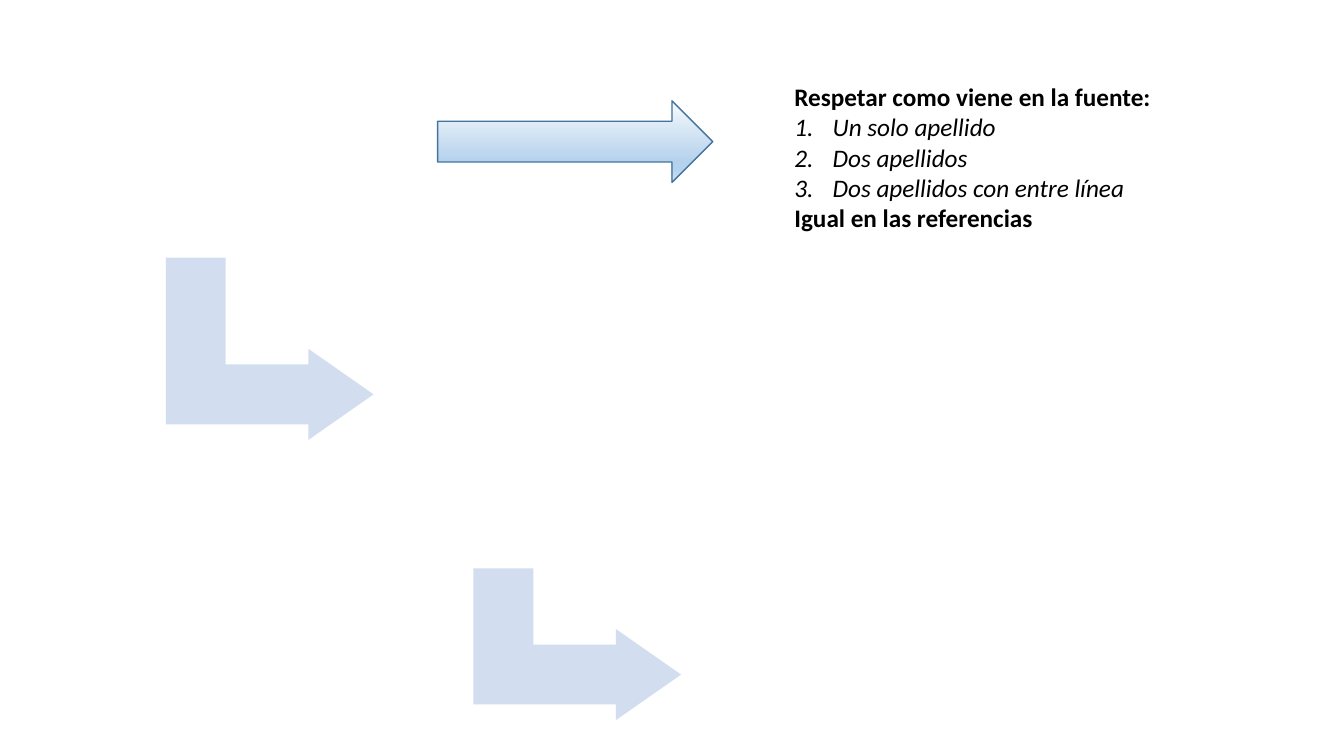
import copy
import pptx
import pptx.util
import pptx.dml.color
import pptx.enum.shapes
import pptx.oxml.ns
import pptx.oxml.xmlchemy
from lxml import etree

Inches = pptx.util.Inches
Kind = pptx.enum.shapes.MSO_SHAPE
qn = pptx.oxml.ns.qn

theme = {
    "font": "Calibri",
    "size": 18,
    "text": "000000",
    "card": "FFFFFF",
    "bend": "D2DEEF",
    "edge": "43739E",
    "fade": [(0, "F7FAFD"), (74, "B5D2EC"), (83, "B5D2EC"), (100, "CEE1F2")],
}

lines = [
    ("Respetar como viene en la fuente:", False),
    ("Un solo apellido", True),
    ("Dos apellidos", True),
    ("Dos apellidos con entre línea", True),
    ("Igual en las referencias", False),
]

bend = (0.328, 0.25, 0.358)
steps = [
    (Kind.BENT_UP_ARROW, (1.77, 2.43, 1.81, 2.06), "bend"),
    (Kind.ROUNDED_RECTANGLE, (1.29, 0.42, 3.05, 2.13), "card"),
    (Kind.BENT_UP_ARROW, (4.82, 5.21, 1.81, 2.06), "bend"),
    (Kind.ROUNDED_RECTANGLE, (3.93, 2.74, 4.09, 2.9), "card"),
    (Kind.ROUNDED_RECTANGLE, (6.98, 5.77, 2.66, 1.59), "card"),
]
arrow = (4.34, 1, 2.73, 0.81)
note = (7.78, 0.76, 3.95, 1.62)
indent = 0.38


def color(code):
    return pptx.dml.color.RGBColor.from_string(code)


def place(slide, kind, box):
    shape = slide.shapes.add_shape(kind, *map(Inches, box))
    shape.shadow.inherit = False
    return shape


def draw_step(slide, kind, box, role):
    shape = place(slide, kind, box)
    shape.fill.solid()
    shape.fill.fore_color.rgb = color(theme[role])
    shape.line.fill.background()
    if role == "bend":
        shape.rotation = 90
        for i, value in enumerate(bend):
            shape.adjustments[i] = value


def draw_arrow(slide):
    shape = place(slide, Kind.RIGHT_ARROW, arrow)
    shape.fill.gradient()
    shape.fill.gradient_angle = 270
    stops = shape._element.spPr.find(qn("a:gradFill")).find(qn("a:gsLst"))
    for stop in list(stops)[1:]:
        stops.remove(stop)
    for _ in theme["fade"][1:]:
        stops.append(copy.deepcopy(stops[0]))
    for stop, (spot, code) in zip(shape.fill.gradient_stops, theme["fade"]):
        stop.position = spot / 100
        stop.color.rgb = color(code)
    shape.line.color.rgb = color(theme["edge"])
    shape.line.width = pptx.util.Pt(1)


def draw_note(slide):
    frame = slide.shapes.add_textbox(*map(Inches, note)).text_frame
    frame.word_wrap = True
    for i, (text, item) in enumerate(lines):
        para = frame.paragraphs[0] if i == 0 else frame.add_paragraph()
        run = para.add_run()
        run.text = text
        font = run.font
        font.name = theme["font"]
        font.size = pptx.util.Pt(theme["size"])
        font.color.rgb = color(theme["text"])
        font.bold = not item
        font.italic = item
        if item:
            props = para._p.get_or_add_pPr()
            props.set("marL", str(Inches(indent)))
            props.set("indent", str(-Inches(indent)))
            mark = etree.SubElement(props, qn("a:buAutoNum"))
            mark.set("type", "arabicPeriod")


def main():
    deck = pptx.Presentation()
    deck.slide_width = Inches(13.33)
    deck.slide_height = Inches(7.5)
    slide = deck.slides.add_slide(deck.slide_layouts[6])
    for step in steps:
        draw_step(slide, *step)
    draw_arrow(slide)
    draw_note(slide)
    deck.save("out.pptx")


if __name__ == "__main__":
    main()
